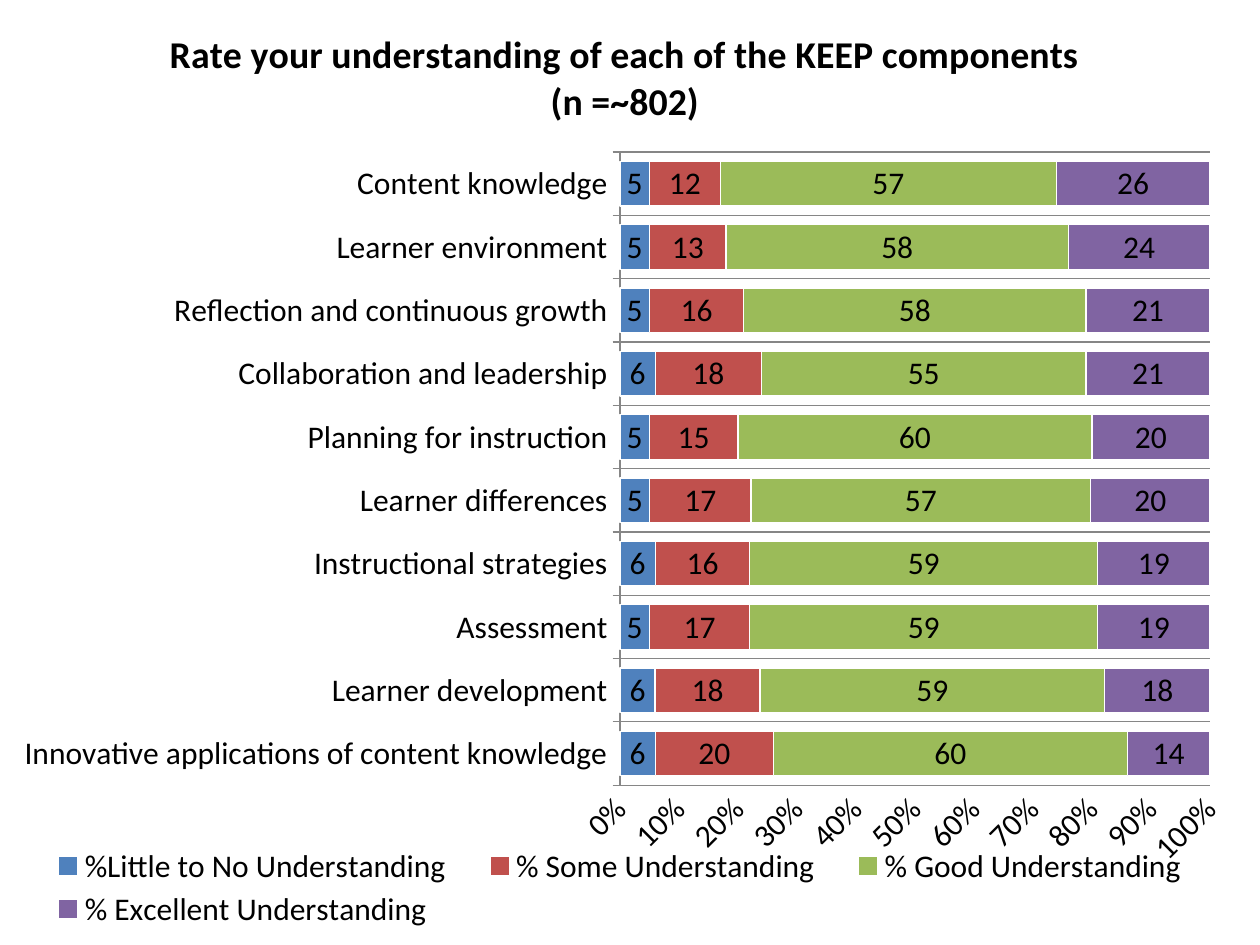
from pptx import Presentation
from pptx.chart.data import CategoryChartData
from pptx.dml.color import RGBColor
from pptx.enum.chart import (XL_CHART_TYPE, XL_LABEL_POSITION,
                             XL_LEGEND_POSITION, XL_TICK_MARK)
from pptx.enum.text import PP_ALIGN
from pptx.oxml import parse_xml
from pptx.oxml.ns import nsdecls
from pptx.util import Pt

WIDE, HIGH = 1250, 945
TITLE = "Rate your understanding of each of the KEEP components\n(n =~802)"
TOPICS = [
    "Innovative applications of content knowledge",
    "Learner development",
    "Assessment",
    "Instructional strategies",
    "Learner differences",
    "Planning for instruction",
    "Collaboration and leadership",
    "Reflection and continuous growth",
    "Learner environment",
    "Content knowledge",
]
LEVELS = [
    ("%Little to No Understanding", "4F81BD", [6, 6, 5, 6, 5, 5, 6, 5, 5, 5]),
    ("% Some Understanding", "C0504D", [20, 18, 17, 16, 17, 15, 18, 16, 13, 12]),
    ("% Good Understanding", "9BBB59", [60, 59, 59, 59, 57, 60, 55, 58, 58, 57]),
    ("% Excellent Understanding", "8064A2", [14, 18, 19, 19, 20, 20, 21, 21, 24, 26]),
]


def px(n):
    return round(n * 914400 / 126)


def color(code):
    return RGBColor.from_string(code)


def style(font, size, bold=False):
    font.name = "Calibri"
    font.size = Pt(size)
    font.bold = bold
    font.color.rgb = color("000000")


def stroke(line, code):
    line.color.rgb = color(code)
    line.width = Pt(0.75)


def layout(x, y, w, h, inner=False):
    target = '<c:layoutTarget val="inner"/>' if inner else ""
    return parse_xml(
        f'<c:layout {nsdecls("c")}><c:manualLayout>{target}'
        '<c:xMode val="edge"/><c:yMode val="edge"/>'
        f'<c:x val="{x / WIDE:.3f}"/><c:y val="{y / HIGH:.3f}"/>'
        f'<c:w val="{w / WIDE:.3f}"/><c:h val="{h / HIGH:.3f}"/>'
        '</c:manualLayout></c:layout>')


def place(node, box):
    for old in node.xpath("./c:layout"):
        node.remove(old)
    if node.xpath("./c:legendPos"):
        node.xpath("./c:legendPos")[0].addnext(box)
    else:
        node.insert(0, box)


def add_bars(slide):
    data = CategoryChartData(number_format="0.00")
    data.categories = TOPICS
    for name, _, vals in LEVELS:
        data.add_series(name, vals)
    chart = slide.shapes.add_chart(
        XL_CHART_TYPE.BAR_STACKED_100, 0, 0, px(WIDE), px(HIGH), data).chart
    style(chart.font, 18)
    plot = chart.plots[0]
    plot.gap_width, plot.overlap = 42, 100
    plot.vary_by_categories = False
    for series, (_, code, _) in zip(plot.series, LEVELS):
        series.format.fill.solid()
        series.format.fill.fore_color.rgb = color(code)
        stroke(series.format.line, "FFFFFF")
        labels = series.data_labels
        labels.show_value = True
        labels.position = XL_LABEL_POSITION.CENTER
        labels.number_format = "#,##0"
        labels.number_format_is_linked = False
        style(labels.font, 18)
    return chart


def set_title(chart):
    frame = chart.chart_title.text_frame
    frame.text = TITLE
    for para in frame.paragraphs:
        para.alignment = PP_ALIGN.CENTER
        for run in para.runs:
            style(run.font, 21.6, True)
    chart.chart_title.include_in_layout = False


def set_axes(chart):
    topic, share = chart.category_axis, chart.value_axis
    topic.major_tick_mark = XL_TICK_MARK.OUTSIDE
    topic.has_major_gridlines = True
    stroke(topic.major_gridlines.format.line, "868686")
    stroke(topic.format.line, "868686")
    share.has_major_gridlines = False
    share.major_tick_mark = XL_TICK_MARK.NONE
    share.minimum_scale, share.maximum_scale = 0, 1
    share.major_unit = 0.1
    share.tick_labels.number_format = "0%"
    share.tick_labels.number_format_is_linked = False
    share.format.line.fill.background()
    for axis in (topic, share):
        style(axis.tick_labels.font, 18)
    body = share.tick_labels.font._element.xpath("ancestor::c:txPr/a:bodyPr") \
        if hasattr(share.tick_labels.font, "_element") \
        else chart.element.xpath(".//c:valAx/c:txPr/a:bodyPr") \
        if hasattr(chart, "element") else chart._chartSpace.xpath(".//c:valAx/c:txPr/a:bodyPr")
    body[0].set("rot", "-2700000")


def set_legend(chart):
    chart.has_legend = True
    legend = chart.legend
    legend.position = XL_LEGEND_POSITION.BOTTOM
    legend.include_in_layout = False
    style(legend.font, 18)


def main():
    deck = Presentation()
    deck.slide_width, deck.slide_height = px(1260), px(HIGH)
    slide = deck.slides.add_slide(deck.slide_layouts[6])
    chart = add_bars(slide)
    set_title(chart)
    set_axes(chart)
    set_legend(chart)
    root = chart._chartSpace
    place(root.xpath(".//c:plotArea")[0], layout(620, 152, 590, 633, True))
    place(root.xpath(".//c:legend")[0], layout(25, 843, 1190, 90))
    deck.save("out.pptx")


if __name__ == "__main__":
    main()
